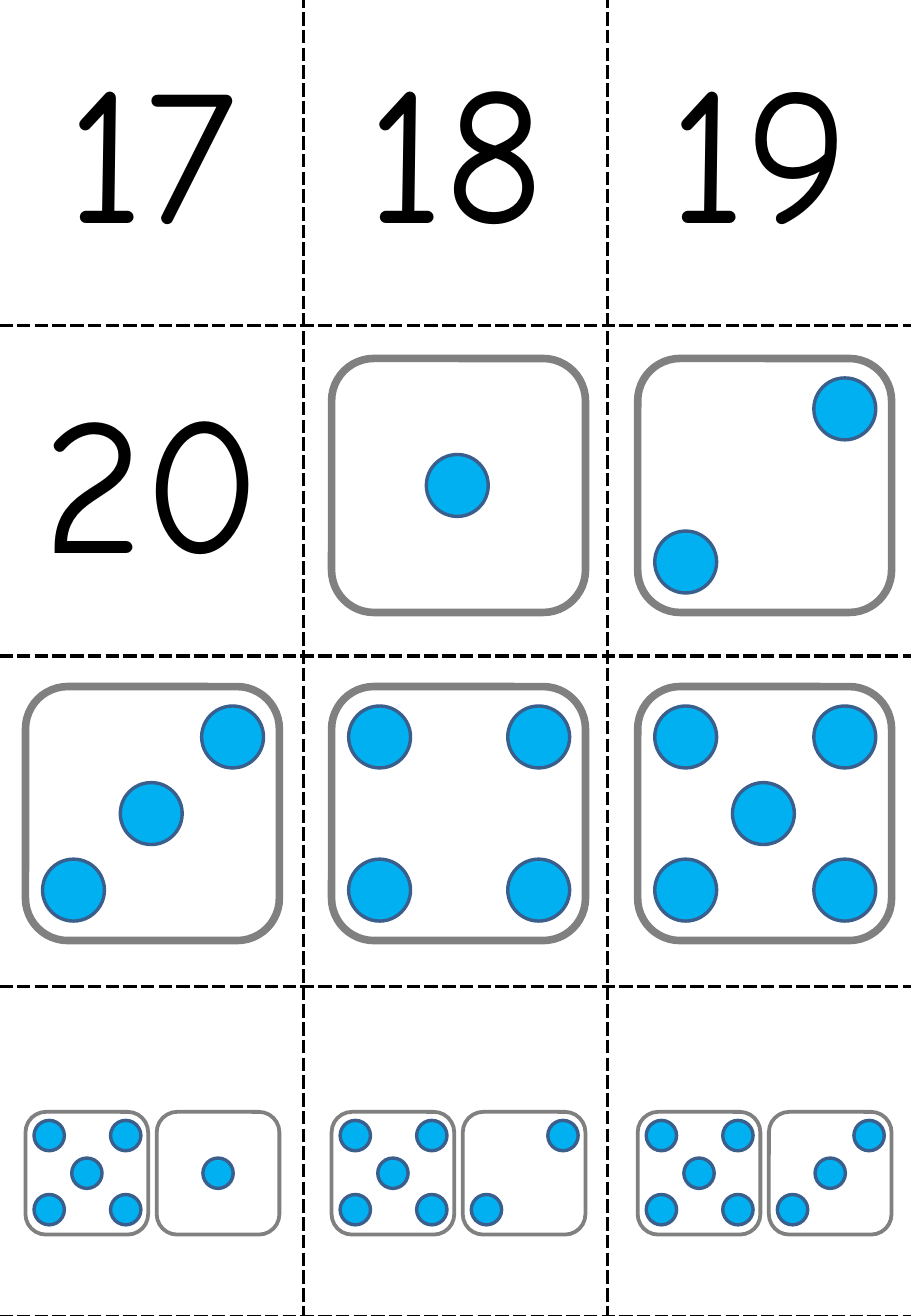
from lxml import etree
from pptx import Presentation
from pptx.dml.color import RGBColor
from pptx.enum.shapes import MSO_SHAPE
from pptx.enum.text import MSO_ANCHOR, PP_ALIGN
from pptx.oxml.ns import qn
from pptx.util import Pt

ROUND, OVAL = MSO_SHAPE.ROUNDED_RECTANGLE, MSO_SHAPE.OVAL
MIDDLE, CENTER = MSO_ANCHOR.MIDDLE, PP_ALIGN.CENTER

BLACK = RGBColor(0x00, 0x00, 0x00)
WHITE = RGBColor(0xFF, 0xFF, 0xFF)
GREY = RGBColor(0x80, 0x80, 0x80)
BLUE = RGBColor(0x00, 0xB0, 0xF0)
NAVY = RGBColor(0x3A, 0x5F, 0x8C)

SCALE = 9144  # EMU in one px, 100 px to the inch
WIDTH, HEIGHT = 750, 1083
COLS, ROWS = 3, 4
CARD_W, CARD_H = 250, 272
TABLE_TOP = -4

FONT = {"name": "Comic Neue", "size": Pt(115), "bold": False}
PLAIN = ("first_row", "horz_banding")
NUMBERS = ["17", "18", "19", "20"]

# Pips as (column, row) on a grid of three by three
PIPS = {
    1: [(1, 1)],
    2: [(2, 0), (0, 2)],
    3: [(1, 1), (2, 0), (0, 2)],
    4: [(0, 0), (2, 0), (0, 2), (2, 2)],
    5: [(0, 0), (2, 0), (0, 2), (2, 2), (1, 1)],
}
# Die size, pip size, line width and pip offsets across and down
BIG = {"size": 209, "pip": 51, "line": 4.5,
       "across": (14, 78, 145), "down": (16, 79, 142)}
SMALL = {"size": 101, "pip": 25, "line": 2.25,
         "across": (7, 38, 70), "down": (7, 38, 68)}

DIE_LEFT, DIE_STEP = 21, 252
PAIR_STEP = 108
DIE_TOPS = {1: 295, 2: 565, 3: 915}


def px(*values):
    return [round(value * SCALE) for value in values]


def add_border(cell, side, color, width, dash):
    props = cell._tc.get_or_add_tcPr()
    line = etree.SubElement(props, qn("a:ln" + side), w=str(Pt(width)))
    fill = etree.SubElement(line, qn("a:solidFill"))
    etree.SubElement(fill, qn("a:srgbClr"), val=str(color))
    etree.SubElement(line, qn("a:prstDash"), val=dash)


def add_borders(cell, row, col):
    """Dash the inner cuts and the foot; leave the other edges white."""
    edges = {"L": col == 0, "R": col == COLS - 1, "T": row == 0, "B": False}
    for side, outer in edges.items():
        style = (WHITE, 1, "solid") if outer else (BLACK, 2.25, "sysDash")
        add_border(cell, side, *style)


def add_number(cell, number):
    cell.vertical_anchor = MIDDLE
    para = cell.text_frame.paragraphs[0]
    para.alignment = CENTER
    run = para.add_run()
    run.text = number
    for name, value in FONT.items():
        setattr(run.font, name, value)
    run.font.color.rgb = BLACK


def add_cards(slide):
    box = px(0, TABLE_TOP, CARD_W * COLS, CARD_H * ROWS)
    table = slide.shapes.add_table(ROWS, COLS, *box).table
    for name in PLAIN:
        setattr(table, name, False)
    for index in range(ROWS * COLS):
        row, col = divmod(index, COLS)
        cell = table.cell(row, col)
        add_borders(cell, row, col)
        cell.fill.background()
        if index < len(NUMBERS):
            add_number(cell, NUMBERS[index])


def add_shape(group, kind, box, fill, line, width):
    shape = group.shapes.add_shape(kind, *px(*box))
    shape.shadow.inherit = False
    shape.fill.solid()
    shape.fill.fore_color.rgb = fill
    shape.line.color.rgb = line
    shape.line.width = Pt(width)


def add_die(group, left, top, value, form):
    size, pip = form["size"], form["pip"]
    add_shape(group, ROUND, (left, top, size, size), WHITE, GREY, form["line"])
    for col, row in PIPS[value]:
        box = (left + form["across"][col], top + form["down"][row], pip, pip)
        add_shape(group, OVAL, box, BLUE, NAVY, 2)


def add_dice(slide, row, col, values):
    """Draw one big die, or a pair of small ones, on a card."""
    form = BIG if len(values) == 1 else SMALL
    group = slide.shapes.add_group_shape()
    for place, value in enumerate(values):
        left = DIE_LEFT + col * DIE_STEP + place * PAIR_STEP
        add_die(group, left, DIE_TOPS[row], value, form)


def main():
    deck = Presentation()
    deck.slide_width, deck.slide_height = px(WIDTH, HEIGHT)
    slide = deck.slides.add_slide(deck.slide_layouts[6])
    add_cards(slide)
    dice = [(1,), (2,), (3,), (4,), (5,), (5, 1), (5, 2), (5, 3)]
    for index, values in enumerate(dice, len(NUMBERS)):
        add_dice(slide, *divmod(index, COLS), values)
    deck.save("out.pptx")


if __name__ == "__main__":
    main()
